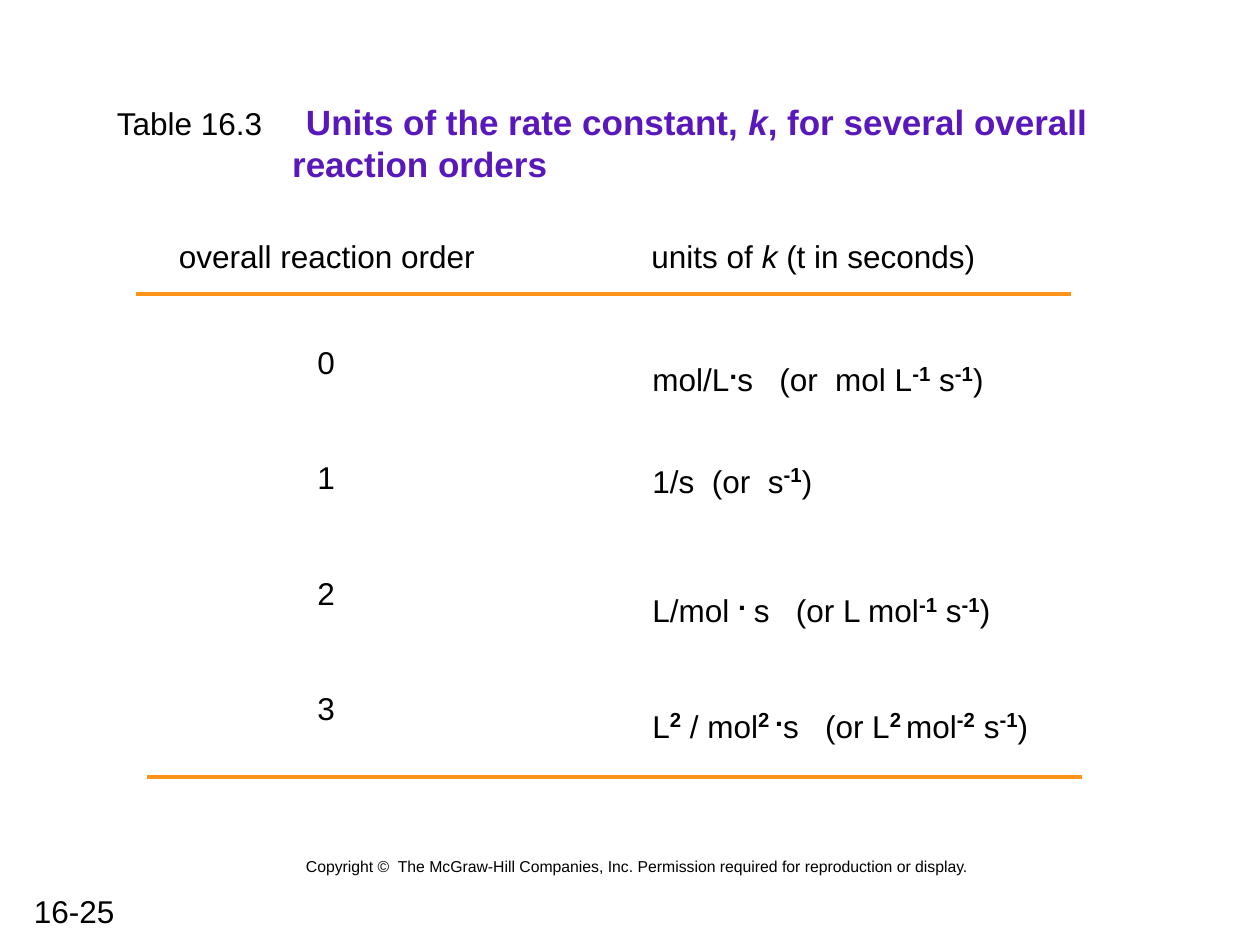
from dataclasses import dataclass

from lxml import etree
from pptx import Presentation
from pptx import util as u
from pptx.dml.color import RGBColor
from pptx.enum import shapes, text
from pptx.oxml import ns


@dataclass(frozen=True)
class Theme:
    font: str = "Arial"
    ink: str = "000000"
    heading: str = "5918BB"
    rule: str = "FF9218"
    body: float = 18
    title: float = 20
    raised: float = 20
    dot: float = 28
    small: float = 9
    rule_width: float = 2.25


THEME = Theme()


def span(words, **fmt):
    """Pair words with size, color, bold, italic and baseline (percent)."""
    return words, fmt


def sup(words):
    return span(words, size=THEME.raised, bold=True, baseline=30)


def dot(words="."):
    return span(words, size=THEME.dot, bold=True, baseline=24)


def heading(words, italic=False):
    return span(words, size=THEME.title, bold=True, color=THEME.heading, italic=italic)


class SlideWriter:
    def __init__(self, slide, theme):
        self.slide = slide
        self.theme = theme

    def run(self, paragraph, words, size=None, color=None, bold=False,
            italic=False, baseline=0):
        run = paragraph.add_run()
        run.text = words
        run.font.name = self.theme.font
        run.font.size = u.Pt(size or self.theme.body)
        run.font.color.rgb = RGBColor.from_string(color or self.theme.ink)
        run.font.bold = bold
        run.font.italic = italic
        if baseline:
            run.font._element.set("baseline", str(baseline * 1000))

    def text(self, left, top, width, height, *lines, side_inset=0.1, wrap=True):
        """Add a box; each line is a list of plain strings and spans."""
        box = self.slide.shapes.add_textbox(*map(u.Inches, (left, top, width, height)))
        frame = box.text_frame
        frame.word_wrap = wrap
        frame.auto_size = text.MSO_AUTO_SIZE.SHAPE_TO_FIT_TEXT
        frame.margin_left = frame.margin_right = u.Inches(side_inset)
        for index, line in enumerate(lines):
            paragraph = frame.add_paragraph() if index else frame.paragraphs[0]
            for part in line:
                words, fmt = span(part) if isinstance(part, str) else part
                self.run(paragraph, words, **fmt)
        return frame

    def rule(self, left, top, width):
        line = self.slide.shapes.add_connector(
            shapes.MSO_CONNECTOR.STRAIGHT,
            *map(u.Inches, (left, top, left + width, top)))
        line.line.color.rgb = RGBColor.from_string(self.theme.rule)
        line.line.width = u.Pt(self.theme.rule_width)
        etree.SubElement(line._element.spPr, ns.qn("a:effectLst"))


def indent(paragraph, left=0, tab=None):
    properties = paragraph._p.get_or_add_pPr()
    properties.set("marL", str(u.Inches(left)))
    properties.set("indent", "0")
    if tab:
        stops = etree.SubElement(properties, ns.qn("a:tabLst"))
        etree.SubElement(stops, ns.qn("a:tab"), pos=str(u.Inches(tab)), algn="l")


UNITS_BY_ORDER = [
    ["mol/L", dot(), "s   (or  mol L", sup("-1"), " s", sup("-1"), ")"],
    ["1/s  (or  s", sup("-1"), ")"],
    ["L/mol ", dot(". "), "s   (or L mol", sup("-1"), " s", sup("-1"), ")"],
    ["L", sup("2"), " / mol", sup("2 "), dot(), "s   (or L", sup("2"),
     span(" ", baseline=30), "mol", sup("-2"), " s", sup("-1"), ")"],
]
FIRST_ROW, ROW_STEP = 2.67, 0.917
RULE_LENGTH = 7.42


def main():
    deck = Presentation()
    deck.slide_width, deck.slide_height = u.Inches(10), u.Inches(7.5)
    page = SlideWriter(deck.slides.add_slide(deck.slide_layouts[6]), THEME)

    page.text(0.17, 7.03, 1.08, 0.4, ["16-25"])
    title = page.text(
        0.83, 0.75, 8.42, 0.77,
        ["Table 16.3\t", heading("Units of the rate constant, "),
         heading("k", italic=True), heading(", for several overall")],
        [heading("reaction orders")])
    first_line, second_line = title.paragraphs
    indent(first_line, tab=1.54)
    indent(second_line, left=1.39)

    page.text(1.42, 1.83, 2.92, 0.4, ["overall reaction order"], side_inset=0)
    page.text(5.17, 1.83, 2.92, 0.4,
              ["units of ", span("k", italic=True), " (t in seconds)"], side_inset=0)
    page.rule(1.08, 2.33, RULE_LENGTH)

    for order, units in enumerate(UNITS_BY_ORDER):
        top = FIRST_ROW + order * ROW_STEP
        page.text(2.42, top, 0.33, 0.4, [str(order)])
        page.text(5.08, top, 3.67, 0.42, units)

    page.rule(1.17, 6.17, RULE_LENGTH)
    page.text(
        2.33, 6.75, 5.46, 0.25,
        [span("Copyright ©  The McGraw-Hill Companies, Inc. Permission required "
              "for reproduction or display.", size=THEME.small)],
        wrap=False)

    deck.save("out.pptx")


if __name__ == "__main__":
    main()
